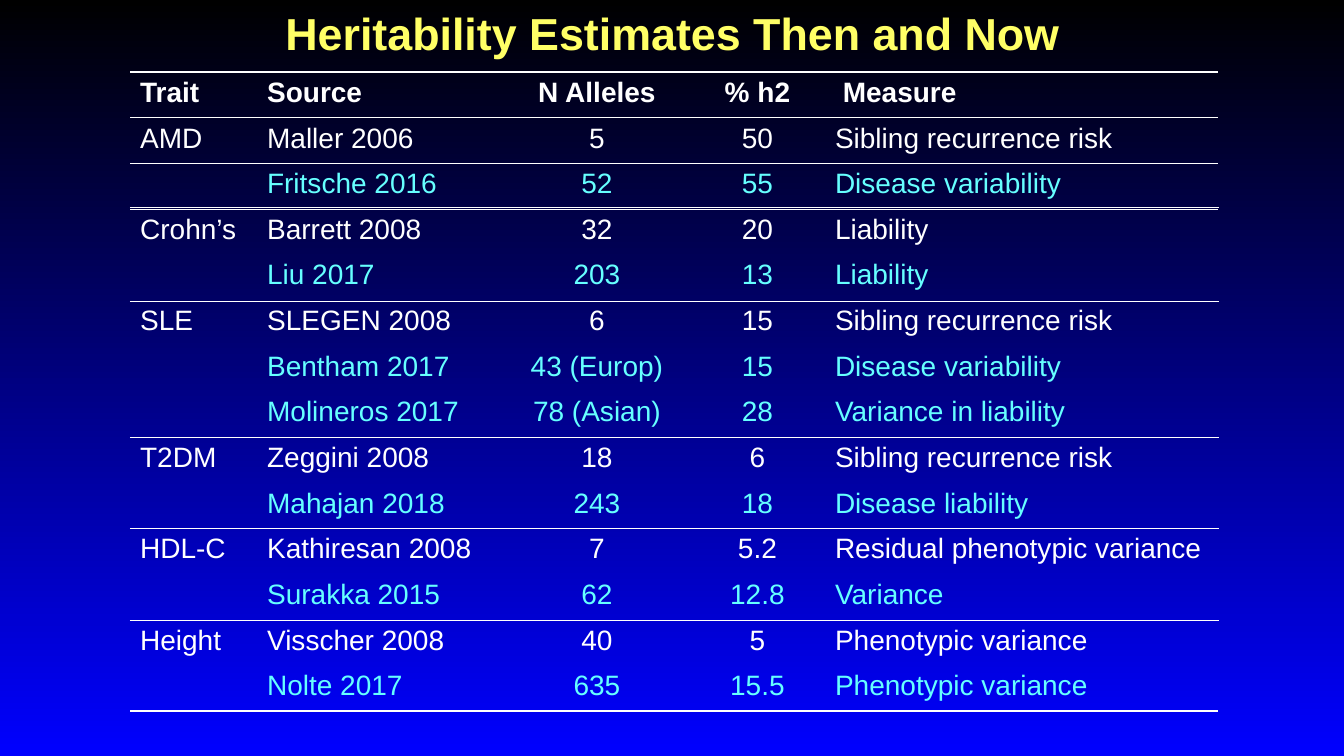
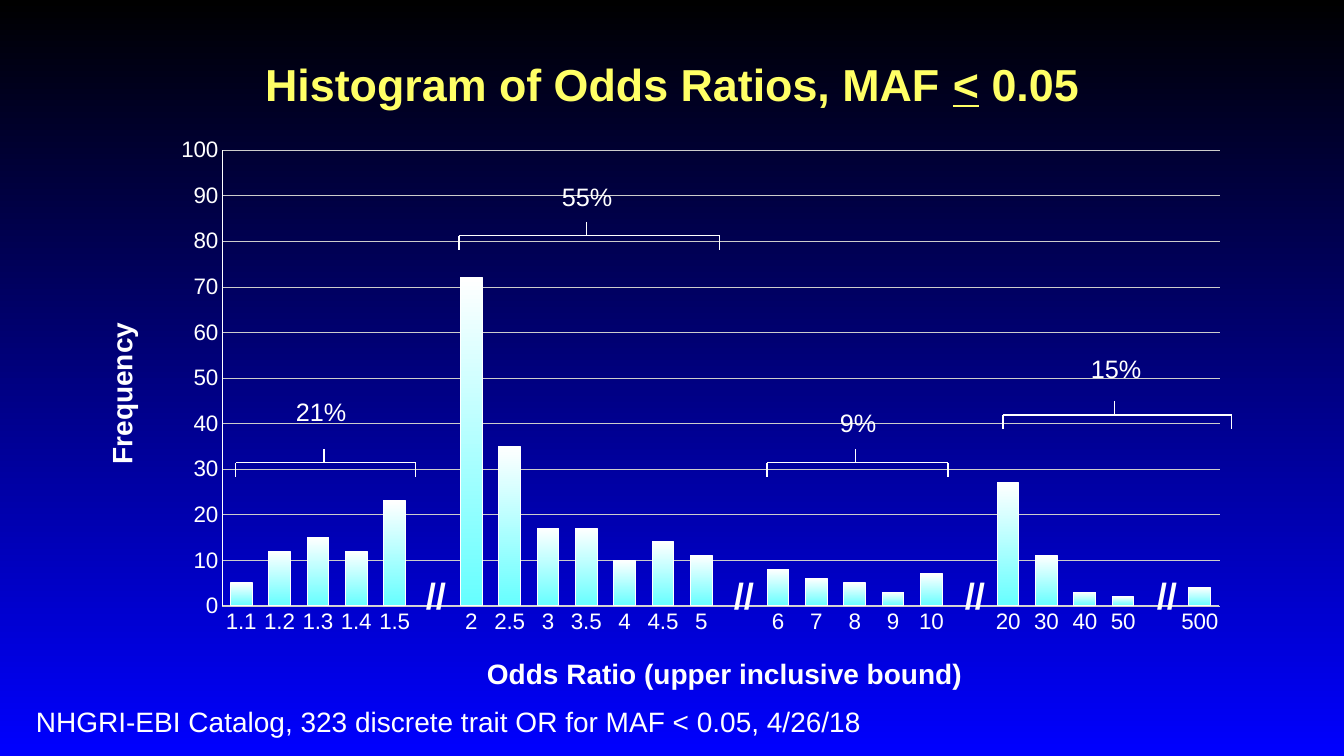
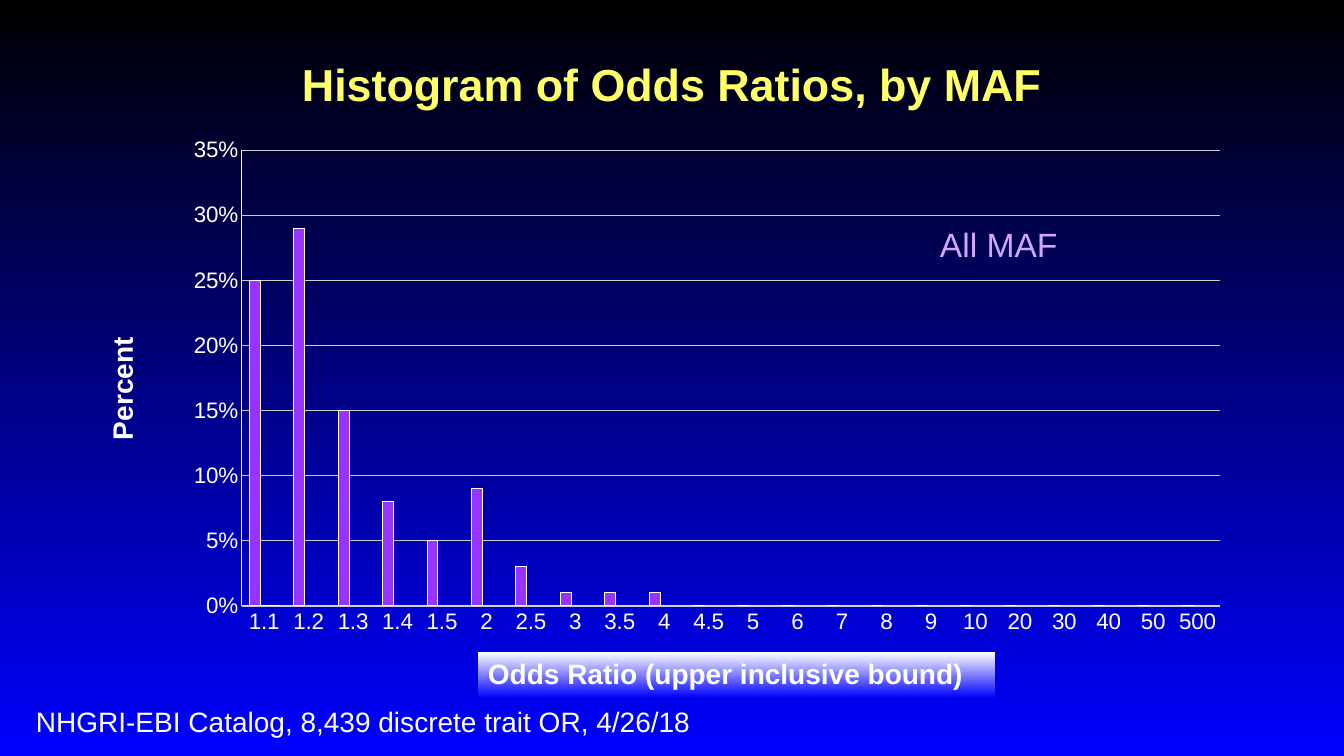
import pptx
import pptx.chart.data
import pptx.dml.color
import pptx.enum.chart
import pptx.enum.dml
import pptx.enum.shapes
import pptx.enum.text
import pptx.oxml
import pptx.oxml.ns
import pptx.util

PX = 914400 / 100.8
FONT = "Arial"
COLORS = {
    "black": "000000", "blue": "0000FF", "white": "FFFFFF", "yellow": "FFFF66",
    "cyan": "66FFFF", "purple": "9933FF", "pink": "FF99FF", "lilac": "D3A7FF",
    "axis": "D9D9D9", "grid": "CCCCCC",
}
LEFT = pptx.enum.text.PP_ALIGN.LEFT
CENTER = pptx.enum.text.PP_ALIGN.CENTER
DOTTED = pptx.enum.dml.MSO_LINE.ROUND_DOT
NO_GRID_STYLE = "{2D5ABB26-0587-4C30-8999-92F81FD0307C}"
CHART_TITLE_BOX = (156, 40, 1032, 92)
X_TITLE = "Odds Ratio (upper inclusive bound)"

TRAIT_ROWS = [
    ("Trait", "Source", "N Alleles", "% h2", " Measure"),
    ("AMD", "Maller 2006", "5", "50", "Sibling recurrence risk"),
    ("", "Fritsche 2016", "52", "55", "Disease variability"),
    ("Crohn’s", "Barrett 2008", "32", "20", "Liability"),
    ("", "Liu 2017", "203", "13", "Liability"),
    ("SLE", "SLEGEN 2008", "6", "15", "Sibling recurrence risk"),
    ("", "Bentham 2017", "43 (Europ)", "15", "Disease variability"),
    ("", "Molineros 2017", "78 (Asian)", "28", "Variance in liability"),
    ("T2DM", "Zeggini 2008", "18", "6", "Sibling recurrence risk"),
    ("", "Mahajan 2018", "243", "18", "Disease liability"),
    ("HDL-C", "Kathiresan 2008", "7", "5.2", "Residual phenotypic variance"),
    ("", "Surakka 2015", "62", "12.8", "Variance"),
    ("Height", "Visscher 2008", "40", "5", "Phenotypic variance"),
    ("", "Nolte 2017", "635", "15.5", "Phenotypic variance"),
]
COLUMN_WIDTHS = (127, 247, 186, 135, 393)

BOUND_GROUPS = [
    ["1.1", "1.2", "1.3", "1.4", "1.5"],
    ["2", "2.5", "3", "3.5", "4", "4.5", "5"],
    ["6", "7", "8", "9", "10"],
    ["20", "30", "40", "50"],
    ["500"],
]
RARE_COUNTS = [
    [5, 12, 15, 12, 23],
    [72, 35, 17, 17, 10, 14, 11],
    [8, 6, 5, 3, 7],
    [27, 11, 3, 2],
    [4],
]
ALL_SHARES = [0.25, 0.29, 0.15, 0.08, 0.05, 0.09, 0.03, 0.01, 0.01, 0.01] + [0] * 12


def px(n):
    return pptx.util.Emu(round(n * PX))


def rgb(name):
    return pptx.dml.color.RGBColor.from_string(COLORS[name])


def set_font(font, size, color="white", bold=False):
    font.name = FONT
    font.size = pptx.util.Pt(size)
    font.bold = bold
    font.color.rgb = rgb(color)


def set_line(line, color="white", width=0.75):
    line.color.rgb = rgb(color)
    line.width = pptx.util.Pt(width)


def set_fill(fill, *names):
    if len(names) == 1:
        fill.solid()
        fill.fore_color.rgb = rgb(names[0])
        return
    fill.gradient()
    fill.gradient_angle = 270
    for stop, name in zip(fill.gradient_stops, names):
        stop.color.rgb = rgb(name)


def add_slide(prs):
    return prs.slides.add_slide(prs.slide_layouts[6])


def add_title(s, box, text, underlined="", rest=""):
    tf = s.shapes.add_textbox(*map(px, box)).text_frame
    tf.word_wrap = True
    tf.vertical_anchor = pptx.enum.text.MSO_ANCHOR.MIDDLE
    p = tf.paragraphs[0]
    p.text = text
    p.alignment = CENTER
    p.line_spacing = 0.95
    if underlined:
        r = p.add_run()
        r.text = underlined
        r.font.underline = True
        p.add_run().text = rest
    for r in p.runs:
        set_font(r.font, 32, "yellow", True)


def add_label(s, box, text, size=20, color="white", bold=False, gradient=None, rotation=0):
    if gradient:
        sp = s.shapes.add_shape(pptx.enum.shapes.MSO_SHAPE.RECTANGLE, *map(px, box))
        sp.shadow.inherit = False
        sp.line.fill.background()
        set_fill(sp.fill, *gradient)
    else:
        sp = s.shapes.add_textbox(*map(px, box))
    sp.rotation = rotation
    tf = sp.text_frame
    tf.word_wrap = False
    tf.auto_size = pptx.enum.text.MSO_AUTO_SIZE.SHAPE_TO_FIT_TEXT
    tf.vertical_anchor = pptx.enum.text.MSO_ANCHOR.TOP
    p = tf.paragraphs[0]
    p.text = text
    p.alignment = LEFT
    set_font(p.runs[0].font, size, color, bold)


def add_line(s, x1, y1, x2, y2, width=0.75, dash=None):
    line = s.shapes.add_connector(
        pptx.enum.shapes.MSO_CONNECTOR.STRAIGHT, *map(px, (x1, y1, x2, y2)))
    set_line(line.line, "white", width)
    line.line.dash_style = dash
    line._element.spPr.append(pptx.oxml.parse_xml(
        f"<a:effectLst {pptx.oxml.ns.nsdecls('a')}/>"))


def add_bracket(s, left, right, stem, y):
    tick = 14
    add_line(s, left, y, right, y)
    add_line(s, left, y, left, y + tick)
    add_line(s, right, y, right, y + tick)
    add_line(s, stem, y - tick, stem, y)


def set_borders(cell, **widths):
    tcPr = cell._tc.get_or_add_tcPr()
    for i, (side, width) in enumerate(widths.items()):
        tcPr.insert(i, pptx.oxml.parse_xml(
            f'<a:{side} {pptx.oxml.ns.nsdecls("a")} w="{pptx.util.Pt(width)}">'
            f'<a:solidFill><a:srgbClr val="{COLORS["white"]}"/></a:solidFill></a:{side}>'))


def add_trait_table(s, left, top, height):
    count = len(TRAIT_ROWS)
    frame = s.shapes.add_table(count, len(COLUMN_WIDTHS), px(left), px(top),
                               px(sum(COLUMN_WIDTHS)), px(height))
    table = frame.table
    table.first_row = table.horz_banding = False
    table._tbl.tblPr.find(pptx.oxml.ns.qn("a:tableStyleId")).text = NO_GRID_STYLE
    for column, width in zip(table.columns, COLUMN_WIDTHS):
        column.width = px(width)
    borders = {0: {"lnT": 1, "lnB": 1}, 1: {"lnT": 1, "lnB": 0.25},
               2: {"lnT": 0.25}, count - 1: {"lnB": 1}}
    for i, values in enumerate(TRAIT_ROWS):
        table.rows[i].height = px(height / count)
        color = "white" if values[0] else "cyan"
        for j, value in enumerate(values):
            cell = table.cell(i, j)
            cell.fill.background()
            set_borders(cell, **borders.get(i, {}))
            p = cell.text_frame.paragraphs[0]
            p.text = value
            p.alignment = CENTER if j in (2, 3) else LEFT
            for r in p.runs:
                set_font(r.font, 20, color, i == 0)


def place_plot(chart, box, plot):
    area = chart._chartSpace.chart.plotArea
    for old in area.findall(pptx.oxml.ns.qn("c:layout")):
        area.remove(old)
    fractions = {
        "x": (plot[0] - box[0]) / box[2], "y": (plot[1] - box[1]) / box[3],
        "w": plot[2] / box[2], "h": plot[3] / box[3],
    }
    sizes = "".join(f'<c:{k} val="{v:.4f}"/>' for k, v in fractions.items())
    area.insert(0, pptx.oxml.parse_xml(
        f'<c:layout {pptx.oxml.ns.nsdecls("c")}><c:manualLayout>'
        '<c:layoutTarget val="inner"/><c:xMode val="edge"/><c:yMode val="edge"/>'
        f'{sizes}</c:manualLayout></c:layout>'))


def add_histogram(s, box, plot, bounds, series, top, unit, gap, overlap, fmt="General"):
    data = pptx.chart.data.CategoryChartData(number_format=fmt)
    data.categories = bounds
    for i, (values, _) in enumerate(series, 1):
        data.add_series(f"Series {i}", values)
    chart = s.shapes.add_chart(pptx.enum.chart.XL_CHART_TYPE.COLUMN_CLUSTERED,
                               *map(px, box), data).chart
    chart.has_legend = chart.has_title = False
    set_font(chart.font, 10, "black")
    place_plot(chart, box, plot)
    bars = chart.plots[0]
    bars.vary_by_categories = False
    bars.gap_width = gap
    bars.overlap = overlap
    for ser, (_, names) in zip(bars.series, series):
        ser.invert_if_negative = False
        set_fill(ser.format.fill, *names)
        set_line(ser.format.line)
    for axis, color in ((chart.category_axis, "axis"), (chart.value_axis, "white")):
        axis.major_tick_mark = axis.minor_tick_mark = pptx.enum.chart.XL_TICK_MARK.NONE
        set_font(axis.tick_labels.font, 16)
        set_line(axis.format.line, color)
    axis = chart.value_axis
    axis.minimum_scale = 0
    axis.maximum_scale = top
    axis.major_unit = unit
    axis.tick_labels.number_format = fmt
    axis.tick_labels.number_format_is_linked = False
    grid = axis.major_gridlines.format.line
    set_line(grid, "grid", 0.25)
    grid.dash_style = DOTTED


def join_groups(groups, gap):
    joined = list(groups[0])
    for group in groups[1:]:
        joined += [gap, *group]
    return joined


def heritability_slide(prs):
    s = add_slide(prs)
    add_title(s, (2, 14, 1342, 42), "Heritability Estimates Then and Now")
    add_trait_table(s, 130, 72, 639)
    for y in (207, 301, 437, 528, 620):
        add_line(s, 130, y, 1218, y, 0.25, DOTTED)


def rare_variant_slide(prs):
    s = add_slide(prs)
    add_title(s, CHART_TITLE_BOX, "Histogram of Odds Ratios, MAF ", "<", " 0.05")
    add_histogram(s, (160, 128, 1081, 516), (222, 150, 997, 456),
                  join_groups(BOUND_GROUPS, ""),
                  [(join_groups(RARE_COUNTS, None), ("white", "cyan"))],
                  100, 10, 77, -27)
    add_label(s, (36, 365, 173, 46), "Frequency", bold=True, rotation=270)
    add_label(s, (477, 652, 523, 46), X_TITLE, bold=True)
    for x in (416, 724, 955, 1147):
        add_label(s, (x, 568, 42, 57), "//", 26, bold=True)
    add_label(s, (26, 700, 851, 44),
              "NHGRI-EBI Catalog, 323 discrete trait OR for MAF < 0.05, 4/26/18")
    for bracket, box, share in (
        ((236, 416, 324, 463), (286, 391, 72, 40), "21%"),
        ((459, 720, 587, 236), (552, 176, 72, 40), "55%"),
        ((767, 948, 856, 463), (830, 402, 57, 40), "9%"),
        ((1003, 1232, 1115, 415), (1081, 348, 72, 40), "15%"),
    ):
        add_bracket(s, *bracket)
        add_label(s, box, share, 18)


def all_variant_slide(prs):
    s = add_slide(prs)
    add_title(s, CHART_TITLE_BOX, "Histogram of Odds Ratios, by MAF")
    add_histogram(s, (172, 128, 1068, 516), (242, 150, 978, 456), sum(BOUND_GROUPS, []),
                  [(ALL_SHARES, ("purple",)), ([0], ("cyan",)), ([0], ("pink",))],
                  0.35, 0.05, 134, 13, "0%")
    add_label(s, (60, 366, 124, 44), "Percent", bold=True, rotation=270)
    add_label(s, (478, 652, 517, 46), X_TITLE, bold=True, gradient=("white", "blue"))
    add_label(s, (26, 700, 679, 44), "NHGRI-EBI Catalog, 8,439 discrete trait OR, 4/26/18")
    add_label(s, (930, 219, 139, 50), "All MAF", 24, "lilac")


def main():
    prs = pptx.Presentation()
    prs.slide_width, prs.slide_height = px(1344), px(756)
    set_fill(prs.slide_master.background.fill, "black", "blue")
    heritability_slide(prs)
    rare_variant_slide(prs)
    all_variant_slide(prs)
    prs.save("out.pptx")


if __name__ == "__main__":
    main()
